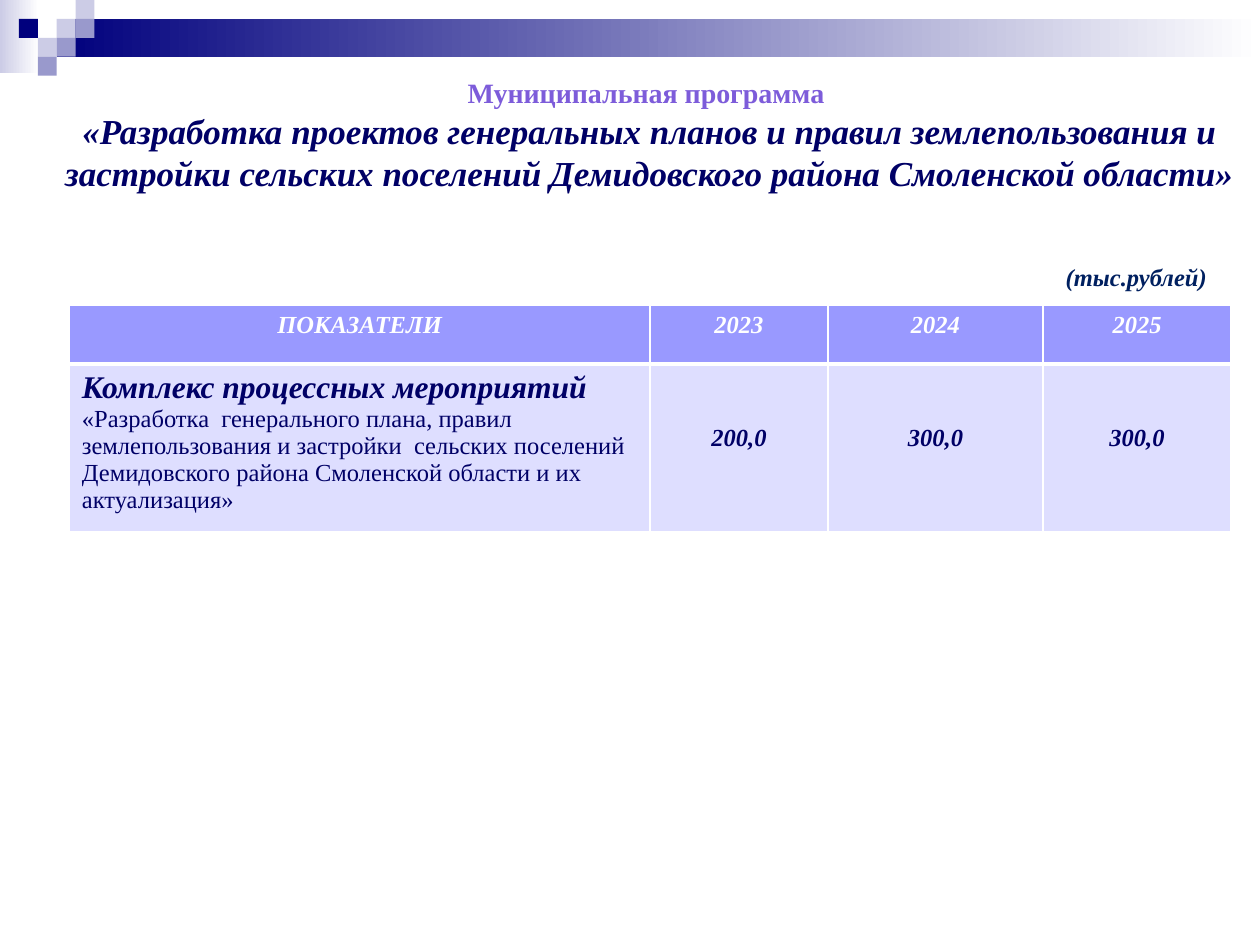
from pptx import Presentation
from pptx.dml.color import RGBColor
from pptx.enum.shapes import MSO_SHAPE as Shape
from pptx.enum.text import MSO_AUTO_SIZE as AutoSize, PP_ALIGN as Align
from pptx.oxml import parse_xml
from pptx.oxml.ns import nsdecls
from pptx.util import Inches, Pt

NAVY, LILAC, MAUVE, WHITE = "00007D", "CCCCE6", "9999CC", "FFFFFF"
INK, HEADER_FILL, BODY_FILL = "000066", "9999FF", "DEDEFF"
TILE = 0.15


def color(value):
    return RGBColor.from_string(value)


def add_span(para, text, size, ink, bold=True, italic=True):
    span = para.add_run()
    span.text = text
    span.font.name = "Times New Roman"
    span.font.size = Pt(size)
    span.font.bold = bold
    span.font.italic = italic
    span.font.color.rgb = color(ink)


def add_block(page, box, *fills):
    block = page.shapes.add_shape(Shape.RECTANGLE, *map(Inches, box))
    block.shadow.inherit = False
    block.line.fill.background()
    if len(fills) == 1:
        block.fill.solid()
        block.fill.fore_color.rgb = color(fills[0])
        return
    block.fill.gradient()
    block.fill.gradient_angle = 0
    for stop, fill, position in zip(block.fill.gradient_stops, fills, (0, 1)):
        stop.color.rgb = color(fill)
        stop.position = position


def add_banner(page, left, top, width):
    add_block(page, (left, top, 0.31, 0.58), LILAC, WHITE)
    add_block(page, (left + 0.45, top + TILE, width - 0.45, 2 * TILE), NAVY, WHITE)
    tiles = [(3, 1, LILAC), (4, 0, LILAC), (4, 1, MAUVE), (2, 2, LILAC),
             (1, 1, NAVY), (3, 2, MAUVE), (2, 3, MAUVE)]
    for column, row, fill in tiles:
        add_block(page, (left + column * TILE, top + row * TILE, TILE, TILE), fill)


def add_text_frame(page, box, wrap):
    frame = page.shapes.add_textbox(*map(Inches, box)).text_frame
    frame.word_wrap = wrap
    frame.auto_size = AutoSize.SHAPE_TO_FIT_TEXT
    return frame


def add_title(page, box):
    frame = add_text_frame(page, box, True)
    para = frame.paragraphs[0]
    para.alignment = Align.CENTER
    add_span(para, "Муниципальная программа ", 16, "7D5CDA", italic=False)
    para = frame.add_paragraph()
    para.alignment = Align.CENTER
    add_span(para, "«Разработка проектов генеральных планов и правил землепользования "
             "и застройки сельских поселений Демидовского района Смоленской области»",
             20, INK)


def add_unit(page, box):
    frame = add_text_frame(page, box, False)
    add_span(frame.paragraphs[0], "(тыс.рублей)", 14, "002060")


def style_cell(cell, fill, top, bottom):
    cell.fill.solid()
    cell.fill.fore_color.rgb = color(fill)
    properties = cell._tc.get_or_add_tcPr()
    sides = {"lnL": 1, "lnR": 1, "lnT": top, "lnB": bottom}
    for index, (side, weight) in enumerate(sides.items()):
        properties.insert(index, parse_xml(
            f'<a:{side} {nsdecls("a")} w="{Pt(weight)}"><a:solidFill>'
            f'<a:srgbClr val="{WHITE}"/></a:solidFill></a:{side}>'))


def add_budget_table(page, box):
    widths, heights = (4.61, 1.41, 1.71, 1.49), (0.47, 1.33)
    table = page.shapes.add_table(2, 4, *map(Inches, box)).table
    for row, height in zip(table.rows, heights):
        row.height = Inches(height)
    headings = ("ПОКАЗАТЕЛИ", "2023", "2024", "2025")
    amounts = (None, "200,0", "300,0", "300,0")
    for index, (width, heading, amount) in enumerate(zip(widths, headings, amounts)):
        table.columns[index].width = Inches(width)
        head, body = table.cell(0, index), table.cell(1, index)
        style_cell(head, HEADER_FILL, 1, 3)
        style_cell(body, BODY_FILL, 3, 1)
        para = head.text_frame.paragraphs[0]
        para.alignment = Align.CENTER
        add_span(para, heading, 14, WHITE)
        para = body.text_frame.paragraphs[0]
        if amount:
            body.margin_top = Inches(0.48)
            para.alignment = Align.CENTER
            add_span(para, amount, 14, INK)
        else:
            add_span(para, "Комплекс процессных мероприятий ", 18, INK)
            add_span(para, "«Разработка  генерального плана, правил землепользования и "
                     "застройки  сельских поселений Демидовского района Смоленской "
                     "области и их актуализация»", 14, INK, bold=False, italic=False)


def main():
    deck = Presentation()
    deck.slide_width, deck.slide_height = Inches(10), Inches(7.5)
    page = deck.slides.add_slide(deck.slide_layouts[6])
    add_banner(page, 0, 0, 10)
    add_title(page, (0.31, 0.55, 9.69, 1.04))
    add_budget_table(page, (0.55, 2.42, 9.22, 1.8))
    add_unit(page, (8.36, 2.03, 1.33, 0.34))
    deck.save("out.pptx")


if __name__ == "__main__":
    main()
